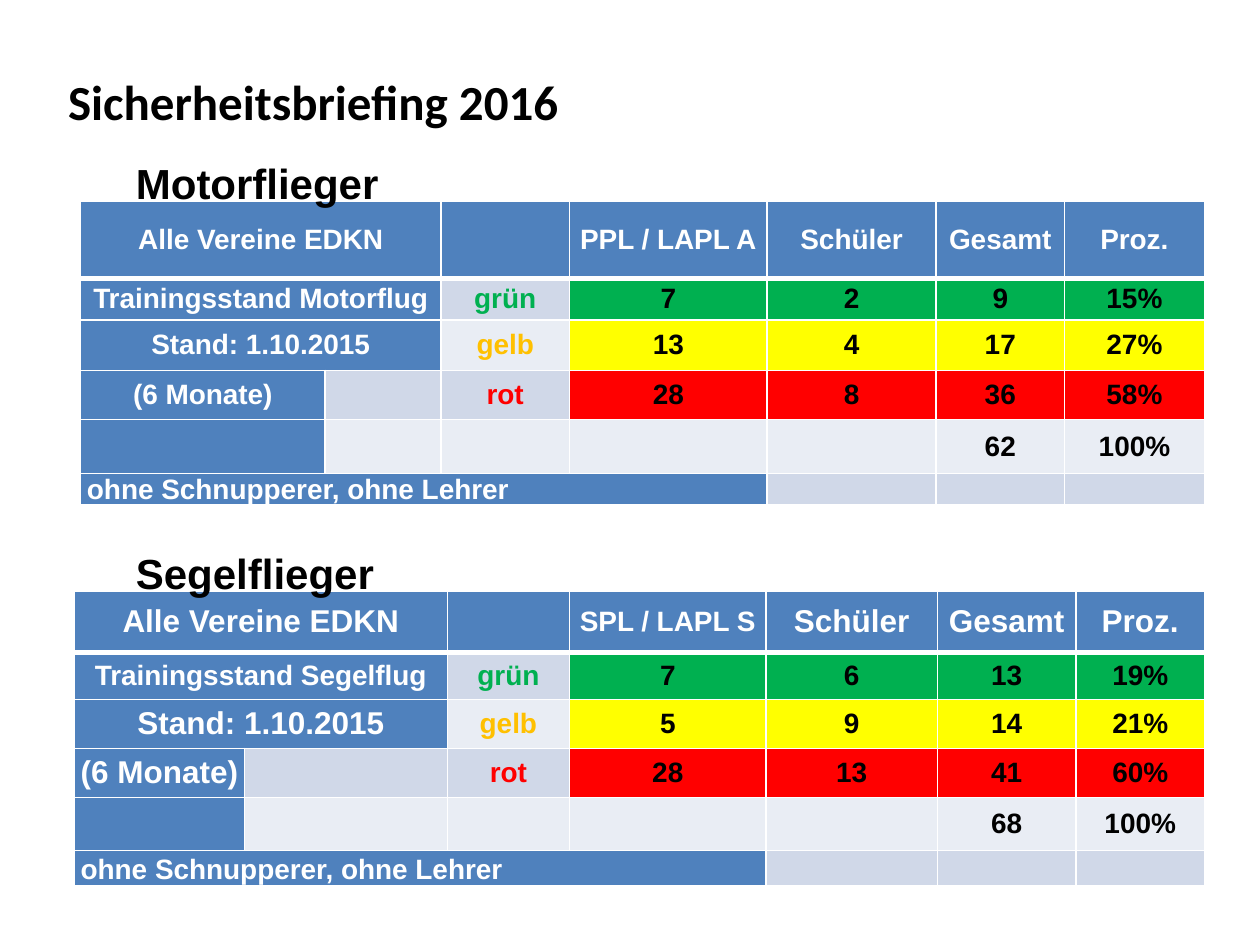
import pptx
import pptx.util
import pptx.dml.color
import pptx.enum.text
import pptx.oxml.xmlchemy
from pptx.oxml.ns import qn
from lxml import etree

Inches = pptx.util.Inches
RGBColor = pptx.dml.color.RGBColor
Align = pptx.enum.text.PP_ALIGN
Anchor = pptx.enum.text.MSO_ANCHOR

BLACK = RGBColor(0x00, 0x00, 0x00)
WHITE = RGBColor(0xFF, 0xFF, 0xFF)
BLUE = RGBColor(0x4F, 0x81, 0xBD)
GREEN = RGBColor(0x00, 0xB0, 0x50)
AMBER = RGBColor(0xFF, 0xC0, 0x00)
YELLOW = RGBColor(0xFF, 0xFF, 0x00)
RED = RGBColor(0xFF, 0x00, 0x00)
BANDS = (RGBColor(0xE9, 0xED, 0xF4), RGBColor(0xD0, 0xD8, 0xE8))

LEVELS = (("grün", GREEN, GREEN), ("gelb", AMBER, YELLOW), ("rot", RED, RED))


def write(frame, text, *, size=16, color=BLACK, font="Arial", align=Align.LEFT):
    paragraph = frame.paragraphs[0]
    paragraph.alignment = align
    if not text:
        etree.SubElement(paragraph._p, qn("a:endParaRPr"), sz="1200")
        return
    run = paragraph.add_run()
    run.text = text
    run.font.size = pptx.util.Pt(size)
    run.font.name = font
    run.font.bold = True
    run.font.color.rgb = color


class Briefing:
    def __init__(self, slide):
        self.slide = slide
        self.inset = Inches(0.05)

    def title(self, text):
        heading = self.slide.shapes.title
        heading.left, heading.top = Inches(0.49), Inches(0.52)
        heading.width, heading.height = Inches(4.58), Inches(0.54)
        frame = heading.text_frame
        frame.margin_left = frame.margin_right = self.inset
        frame.margin_top = frame.margin_bottom = self.inset
        frame.vertical_anchor = Anchor.TOP
        write(frame, text, size=28, font="Calibri")

    def label(self, text, top, width):
        box = self.slide.shapes.add_textbox(
            Inches(0.98), Inches(top), Inches(width), Inches(0.5))
        box.text_frame.word_wrap = False
        box.text_frame.auto_size = pptx.enum.text.MSO_AUTO_SIZE.SHAPE_TO_FIT_TEXT
        write(box.text_frame, text, size=24)

    def cell(self, cell, text, fill, is_header, **style):
        cell.margin_left = cell.margin_right = self.inset
        cell.margin_top = cell.margin_bottom = 0
        cell.vertical_anchor = Anchor.MIDDLE
        for side in ("lnL", "lnR", "lnT", "lnB"):
            points = 3 if is_header and side == "lnB" else 1
            line = etree.SubElement(cell._tc.get_or_add_tcPr(), qn("a:" + side),
                                    w=str(pptx.util.Pt(points)))
            paint = etree.SubElement(line, qn("a:solidFill"))
            etree.SubElement(paint, qn("a:srgbClr"), val=str(WHITE))
        cell.fill.solid()
        cell.fill.fore_color.rgb = fill
        write(cell.text_frame, text, **style)

    def table(self, left, top, widths, heights, licence, branch, results, total,
              large=16, note_anchor=Anchor.MIDDLE):
        rows = [["Alle Vereine EDKN", "", "", licence, "Schüler", "Gesamt", "Proz."]]
        captions = (f"Trainingsstand {branch}", "Stand: 1.10.2015", "(6 Monate)")
        for caption, (level, _, _), values in zip(captions, LEVELS, results):
            rows.append([caption, "", level, *values])
        rows.append([""] * 5 + [total, "100%"])
        rows.append(["ohne Schnupperer, ohne Lehrer"] + [""] * 6)

        grid = self.slide.shapes.add_table(
            len(rows), len(widths), Inches(left), Inches(top),
            Inches(sum(widths)), Inches(sum(heights))).table
        for column, width in zip(grid.columns, widths):
            column.width = Inches(width)
        for row, height in zip(grid.rows, heights):
            row.height = Inches(height)

        large_texts = {"Alle Vereine EDKN", "Schüler", "Gesamt", "Proz.", *captions[1:]}
        last = len(rows) - 1
        for r, texts in enumerate(rows):
            for c, text in enumerate(texts):
                fill, color = BANDS[r % 2], BLACK
                if r == 0 or c == 0:
                    fill, color = BLUE, WHITE
                elif r <= len(LEVELS):
                    _, level_color, level_fill = LEVELS[r - 1]
                    if c == 2:
                        color = level_color
                    elif c > 2:
                        fill = level_fill
                self.cell(grid.cell(r, c), text, fill, r == 0, color=color,
                          size=large if text in large_texts else 16,
                          align=Align.LEFT if r == last else Align.CENTER)
        for r in range(3):
            grid.cell(r, 0).merge(grid.cell(r, 1))
        grid.cell(last, 0).merge(grid.cell(last, 3))
        grid.cell(last, 0).vertical_anchor = note_anchor


def main():
    deck = pptx.Presentation()
    deck.slide_width, deck.slide_height = Inches(10), Inches(7.5)
    briefing = Briefing(deck.slides.add_slide(deck.slide_layouts[5]))
    briefing.title("Sicherheitsbriefing 2016")
    briefing.table(
        0.64, 1.6, (1.94, 0.92, 1.02, 1.57, 1.34, 1.02, 1.11),
        (0.61, 0.33, 0.4, 0.39, 0.43, 0.25), "PPL / LAPL A", "Motorflug",
        (("7", "2", "9", "15%"), ("13", "4", "17", "27%"), ("28", "8", "36", "58%")),
        "62")
    briefing.table(
        0.59, 4.69, (1.35, 1.61, 0.97, 1.56, 1.36, 1.1, 1.02),
        (0.49, 0.37, 0.39, 0.39, 0.42, 0.28), "SPL / LAPL S", "Segelflug",
        (("7", "6", "13", "19%"), ("5", "9", "14", "21%"), ("28", "13", "41", "60%")),
        "68", large=18, note_anchor=Anchor.BOTTOM)
    briefing.label("Motorflieger", 1.2, 2.15)
    briefing.label("Segelflieger", 4.3, 2.11)
    deck.save("out.pptx")


if __name__ == "__main__":
    main()
